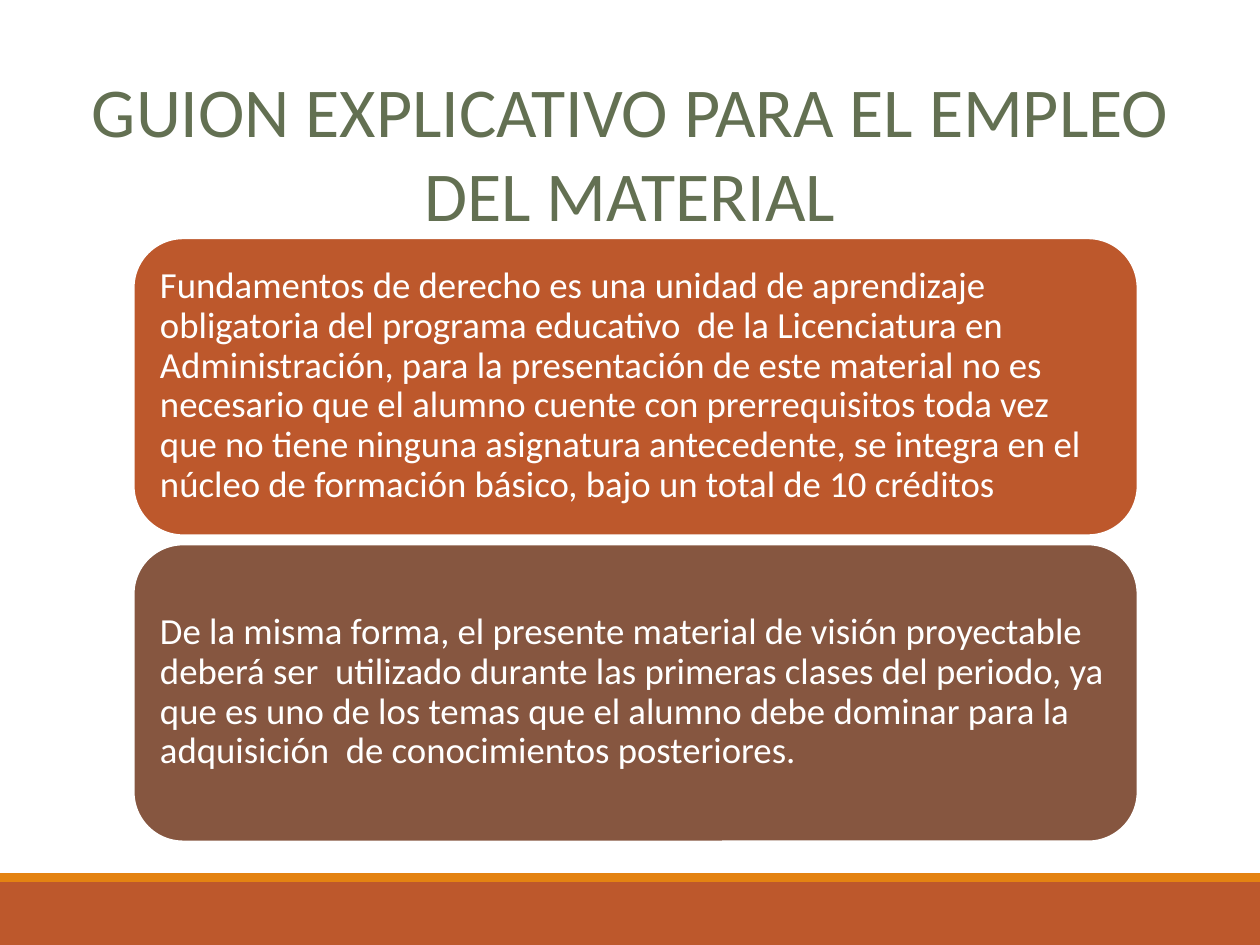
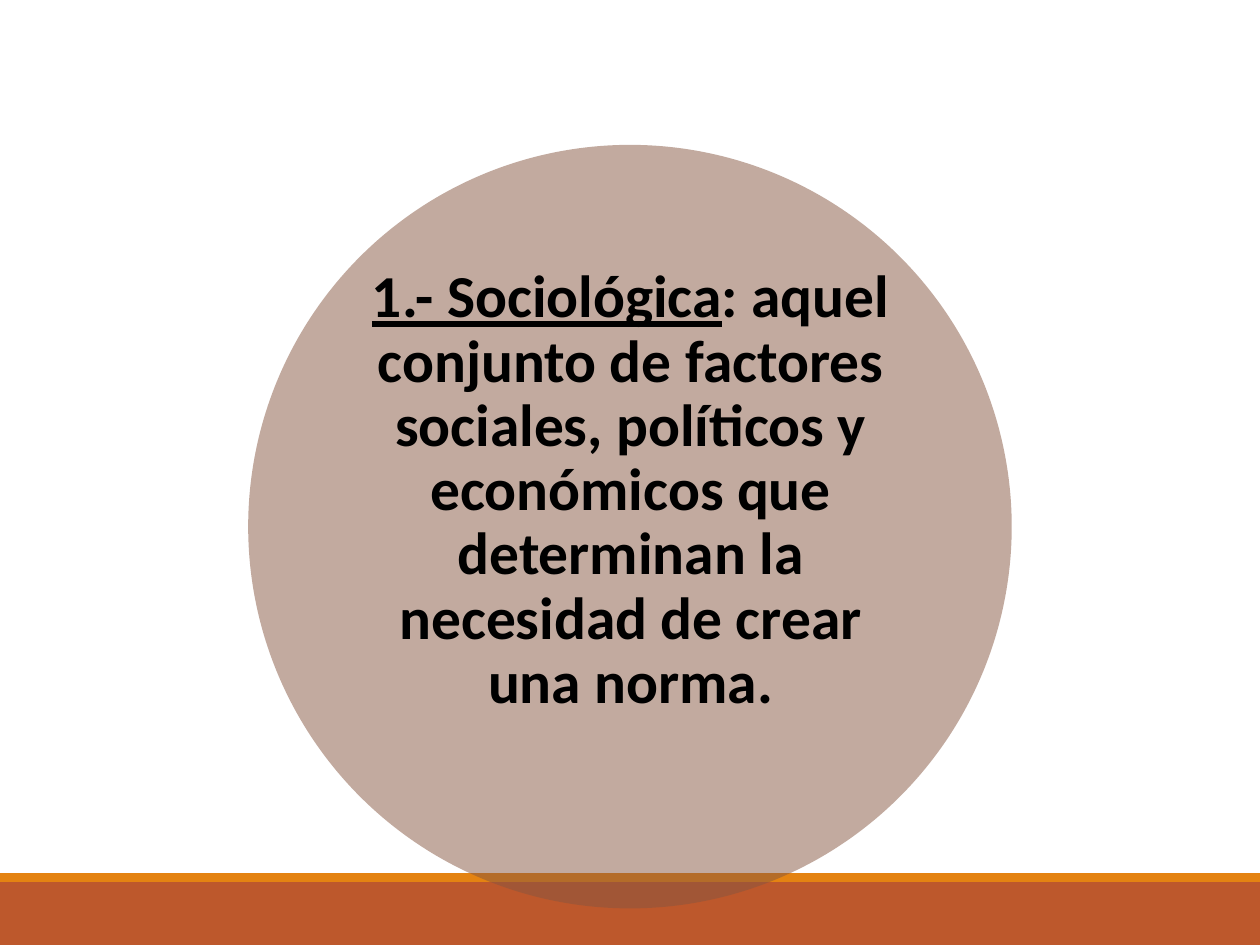
from lxml import etree
from pptx import Presentation
from pptx.dml.color import RGBColor
from pptx.enum.shapes import MSO_SHAPE
from pptx.enum.text import MSO_ANCHOR, PP_ALIGN
from pptx.oxml.ns import qn
from pptx.util import Inches, Pt

RECT, ROUND, OVAL = MSO_SHAPE.RECTANGLE, MSO_SHAPE.ROUNDED_RECTANGLE, MSO_SHAPE.OVAL
LEFT, CENTER = PP_ALIGN.LEFT, PP_ALIGN.CENTER
MIDDLE = MSO_ANCHOR.MIDDLE

RUST, AMBER, BROWN = "BD582C", "E48312", "865640"
GREEN, WHITE, BLACK = "637052", "FFFFFF", "000000"


def color(code):
    return RGBColor.from_string(code)


class Deck:
    font = "Calibri"

    def __init__(self):
        self.prs = Presentation()
        self.prs.slide_width, self.prs.slide_height = Inches(10), Inches(7.5)
        self.slide = None

    def page(self):
        """Start a slide with the two footer bands."""
        self.slide = self.prs.slides.add_slide(self.prs.slide_layouts[6])
        self.shape(RECT, 0, 7, 10, 0.5, RUST)
        self.shape(RECT, 0, 6.93, 10, 0.07, AMBER)

    def shape(self, kind, x, y, w, h, fill, line=None, alpha=None):
        item = self.slide.shapes.add_shape(
            kind, Inches(x), Inches(y), Inches(w), Inches(h))
        item.shadow.inherit = False
        item.fill.solid()
        item.fill.fore_color.rgb = color(fill)
        if line:
            item.line.color.rgb = color(line)
            item.line.width = Pt(1.25)
        else:
            item.line.fill.background()
        if alpha is not None:
            tone = item.fill._xPr.find(qn("a:solidFill"))[0]
            etree.SubElement(tone, qn("a:alpha")).set("val", str(alpha * 1000))

    def text(self, x, y, w, h, runs, size, ink, align=LEFT, inset=0.0,
             space=0.9, bold=False):
        """Add a text box; runs is a list of (words, underlined)."""
        frame = self.slide.shapes.add_textbox(
            Inches(x), Inches(y), Inches(w), Inches(h)).text_frame
        frame.word_wrap = True
        frame.vertical_anchor = MIDDLE
        frame.margin_left = frame.margin_right = Inches(inset)
        frame.margin_top = frame.margin_bottom = Inches(inset)
        para = frame.paragraphs[0]
        para.alignment, para.line_spacing = align, space
        para.font.name, para.font.size = self.font, Pt(size)
        para.font.bold, para.font.color.rgb = bold, color(ink)
        for words, under in runs:
            run = para.add_run()
            run.text = words
            if under:
                run.font.underline = True

    def title(self, words):
        self.text(0.5, 0.77, 9, 0.87, [(words, False)], 40, GREEN,
                  CENTER, inset=0.05, space=1.0)

    def card(self, y, fill, words):
        self.shape(ROUND, 1.06, y, 7.97, 2.36, fill, line=WHITE)
        self.text(1.18, y + 0.11, 7.74, 2.13, [(words, False)], 21, WHITE,
                  inset=0.09)


CARDS = [
    (RUST, "Fundamentos de derecho es una unidad de aprendizaje obligatoria "
           "del programa educativo  de la Licenciatura en Administración, "
           "para la presentación de este material no es necesario que el "
           "alumno cuente con prerrequisitos toda vez que no tiene ninguna "
           "asignatura antecedente, se integra en el núcleo de formación "
           "básico, bajo un total de 10 créditos"),
    (BROWN, "De la misma forma, el presente material de visión proyectable "
            "deberá ser  utilizado durante las primeras clases del periodo, "
            "ya que es uno de los temas que el alumno debe dominar para la "
            "adquisición  de conocimientos posteriores."),
]


def main():
    deck = Deck()

    # Guide: title and two stacked cards
    deck.page()
    deck.title("GUION EXPLICATIVO PARA EL EMPLEO DEL MATERIAL")
    for row, (fill, words) in enumerate(CARDS):
        deck.card(1.89 + 2.43 * row, fill, words)

    # Definition: text in a translucent circle
    deck.page()
    deck.shape(OVAL, 1.97, 1.15, 6.06, 6.06, BROWN, alpha=50)
    deck.text(2.86, 2.04, 4.29, 3.72, [
        ("1.- Sociológica", True),
        (": aquel conjunto de factores sociales, políticos y económicos que "
         "determinan la necesidad de crear una norma.", False),
    ], 34, BLACK, CENTER, bold=True)

    deck.prs.save("out.pptx")


if __name__ == "__main__":
    main()
